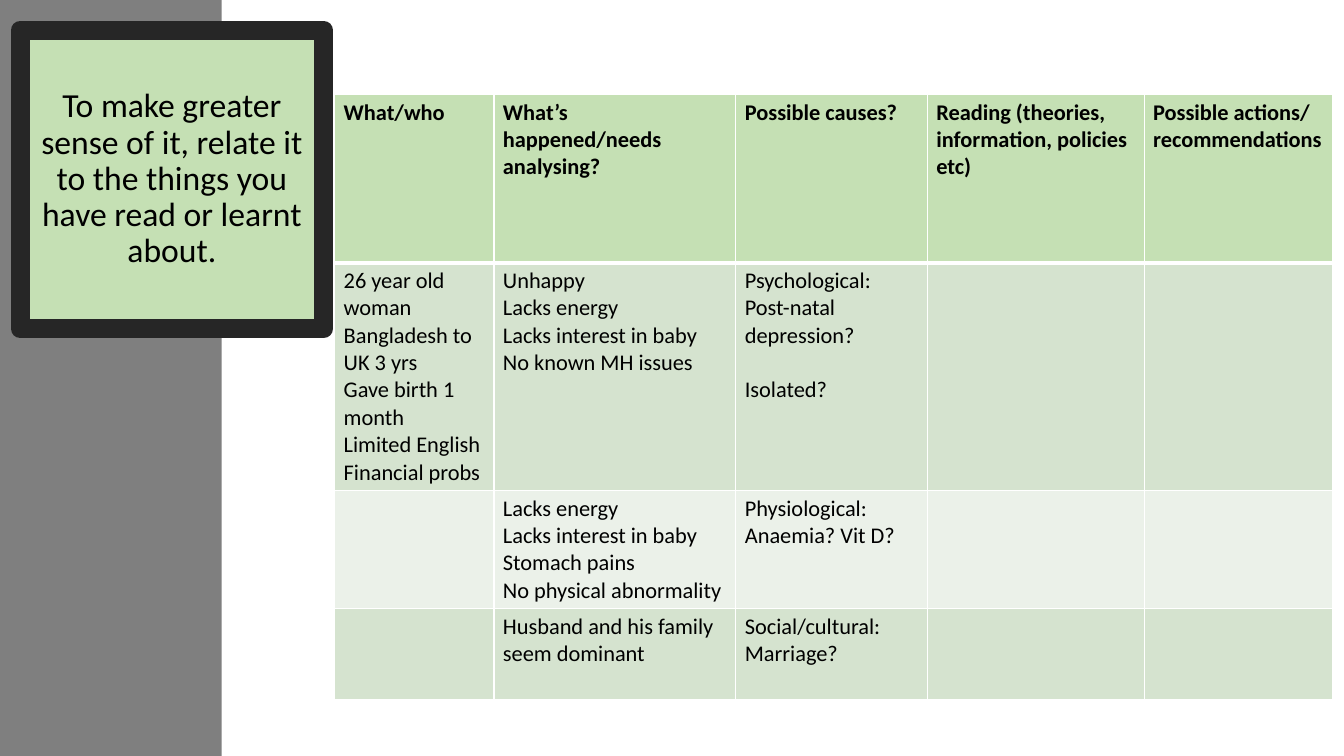
from lxml import etree
from pptx import Presentation
from pptx.dml.color import RGBColor
from pptx.enum.shapes import MSO_SHAPE
from pptx.enum.text import MSO_ANCHOR, MSO_AUTO_SIZE, PP_ALIGN
from pptx.oxml.ns import qn
from pptx.util import Emu, Inches, Pt

RECTANGLE = MSO_SHAPE.RECTANGLE
MIDDLE = MSO_ANCHOR.MIDDLE
NO_AUTOFIT = MSO_AUTO_SIZE.NONE
CENTER = PP_ALIGN.CENTER
TITLE_ONLY = 5

FONT = "Calibri"
WHITE, BLACK, GREY, CHARCOAL = "FFFFFF", "000000", "7F7F7F", "262626"
GREEN, BAND_DARK, BAND_LIGHT = "C5E0B4", "D5E3CF", "EBF1E9"

TITLE = ("To make greater sense of it, relate it to the things "
         "you have read or learnt about.")

# Widths and heights are percentages of the slide
COLUMN_WIDTHS = [11.85, 18, 14.25, 16.13, 14.03]
ROW_HEIGHTS = [22.27, 30.13, 15.6, 12.05]

# An empty line in a cell stands for a gap before the next paragraph
ROWS = [
    ["What/who", "What’s happened/needs analysing?", "Possible causes?",
     "Reading (theories, information, policies etc)",
     "Possible actions/\nrecommendations"],
    ["26 year old woman\nBangladesh to UK 3 yrs\nGave birth 1 month\n"
     "Limited English\nFinancial probs",
     "Unhappy\nLacks energy\nLacks interest in baby\nNo known MH issues",
     "Psychological:\nPost-natal depression?\n\nIsolated?", "", ""],
    ["", "Lacks energy\nLacks interest in baby\nStomach pains\n"
     "No physical abnormality",
     "Physiological:\nAnaemia? Vit D?", "", ""],
    ["", "Husband and his family seem dominant",
     "Social/cultural:\nMarriage?", "", ""],
]


def color(value):
    return RGBColor.from_string(value)


class SlideBuilder:
    """Holds the style and the current slide; lengths are percentages."""

    def __init__(self, presentation):
        self.width = presentation.slide_width
        self.height = presentation.slide_height
        layout = presentation.slide_layouts[TITLE_ONLY]
        self.slide = presentation.slides.add_slide(layout)

    def across(self, share):
        return Emu(round(self.width * share / 100))

    def down(self, share):
        return Emu(round(self.height * share / 100))

    def box(self, left, top, width, height):
        return (self.across(left), self.down(top),
                self.across(width), self.down(height))

    def format_runs(self, paragraph, size, bold=False):
        for run in paragraph.runs:
            run.font.name = FONT
            run.font.size = Pt(size)
            run.font.bold = bold
            run.font.color.rgb = color(BLACK)

    def panel(self, box, fill):
        shape = self.slide.shapes.add_shape(RECTANGLE, *self.box(*box))
        shape.shadow.inherit = False
        shape.fill.solid()
        shape.fill.fore_color.rgb = color(fill)
        shape.line.fill.background()

    def title(self, text, box, fill, line):
        shape = self.slide.shapes.title
        shape.left, shape.top, shape.width, shape.height = self.box(*box)
        shape.fill.solid()
        shape.fill.fore_color.rgb = color(fill)
        shape.line.color.rgb = color(line)
        shape.line.width = Pt(13.75)
        frame = shape.text_frame
        frame.text = text
        frame.word_wrap = True
        frame.auto_size = NO_AUTOFIT
        frame.vertical_anchor = MIDDLE
        paragraph = frame.paragraphs[0]
        paragraph.alignment = CENTER
        paragraph.line_spacing = 0.9
        self.format_runs(paragraph, 24)
        # Bring the title in front of the panel
        self.slide.shapes._spTree.append(shape._element)

    def borders(self, cell, top, bottom):
        properties = cell._tc.get_or_add_tcPr()
        sides = {"a:lnL": 1, "a:lnR": 1, "a:lnT": top, "a:lnB": bottom}
        for index, (side, points) in enumerate(sides.items()):
            line = etree.Element(qn(side), w=str(Pt(points)))
            fill = etree.SubElement(line, qn("a:solidFill"))
            etree.SubElement(fill, qn("a:srgbClr"), val=WHITE)
            properties.insert(index, line)

    def cell(self, cell, text, fill, bold):
        cell.margin_left = cell.margin_right = Inches(0.09)
        cell.margin_top = cell.margin_bottom = Inches(0.04)
        cell.fill.solid()
        cell.fill.fore_color.rgb = color(fill)
        cell.text_frame.text = text.replace("\n\n", "\n")
        for paragraph in cell.text_frame.paragraphs:
            self.format_runs(paragraph, 16, bold)
            if "\n\n" + paragraph.text in text and paragraph.text:
                paragraph.space_before = Pt(19.5)

    def table(self, rows, left, top, widths, heights):
        box = self.box(left, top, sum(widths), sum(heights))
        table = self.slide.shapes.add_table(
            len(rows), len(widths), *box).table
        for column, width in zip(table.columns, widths):
            column.width = self.across(width)
        for row, height in zip(table.rows, heights):
            row.height = self.down(height)
        fills = [GREEN, BAND_DARK, BAND_LIGHT, BAND_DARK]
        for row_index, (texts, fill) in enumerate(zip(rows, fills)):
            header = row_index == 0
            for column_index, text in enumerate(texts):
                cell = table.cell(row_index, column_index)
                self.cell(cell, text, fill, header)
                self.borders(cell, top=3 if row_index == 1 else 1,
                             bottom=3 if header else 1)


def main():
    presentation = Presentation()
    presentation.slide_width = Inches(13.33)
    presentation.slide_height = Inches(7.5)
    builder = SlideBuilder(presentation)

    # Side panel and framed title
    builder.panel((0, 0, 16.5, 100), GREY)
    builder.title(TITLE, (1.5, 4, 22.58, 39.47), GREEN, CHARCOAL)

    # Analysis table
    builder.table(ROWS, 24.9, 12.53, COLUMN_WIDTHS, ROW_HEIGHTS)

    presentation.save("out.pptx")


if __name__ == "__main__":
    main()
